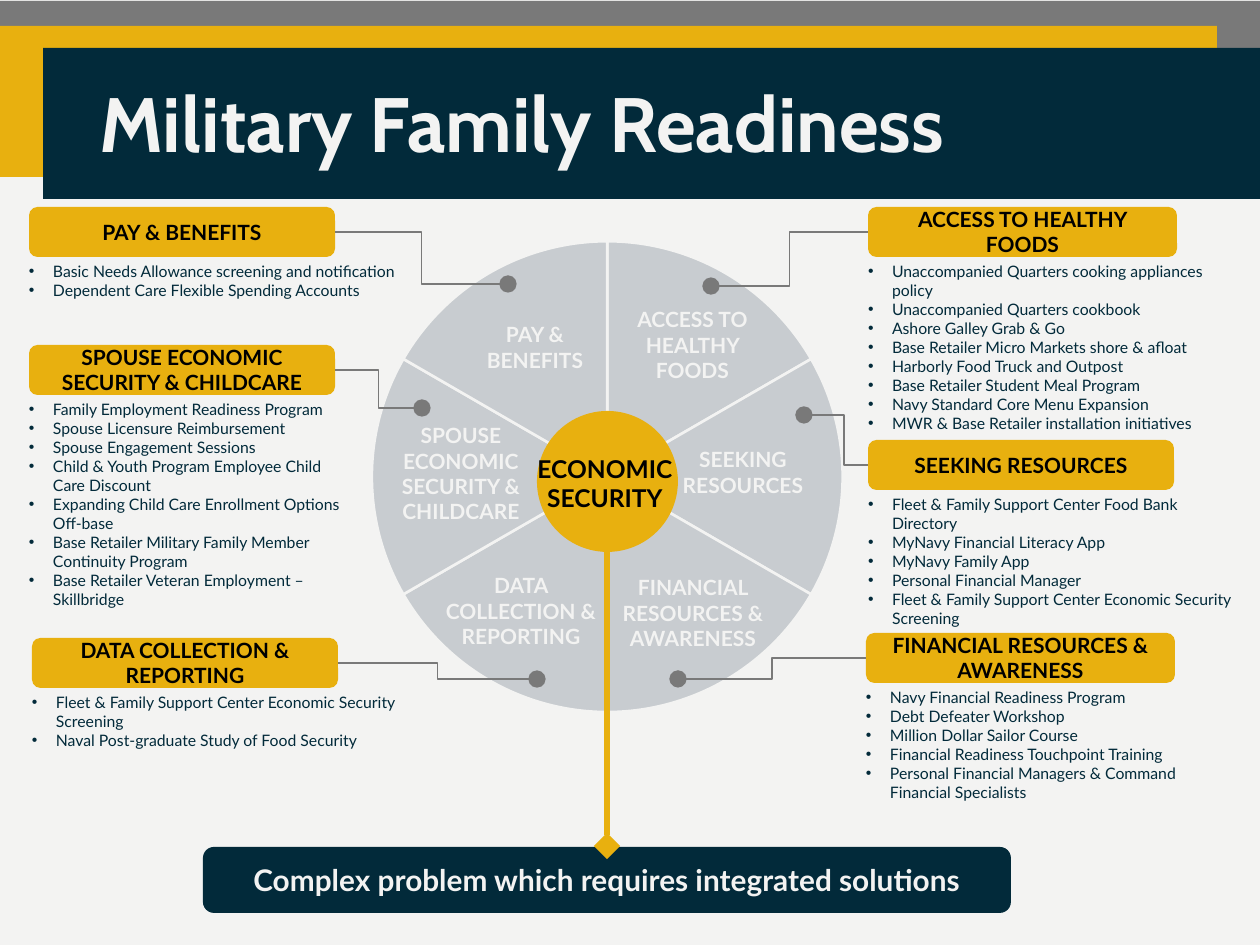
from lxml.etree import SubElement
from pptx import Presentation
from pptx.chart.data import CategoryChartData
from pptx.dml.color import RGBColor
from pptx.enum.chart import XL_CHART_TYPE
from pptx.enum.shapes import MSO_CONNECTOR, MSO_SHAPE
from pptx.enum.text import MSO_ANCHOR, PP_ALIGN
from pptx.oxml import parse_xml
from pptx.oxml.ns import nsdecls, qn
from pptx.util import Pt

SCALE = 914400 / 126
NAVY, GOLD, GRAY, PALE = "022A3A", "E8B00F", "797979", "F3F3F2"
SLICE, BLACK = "C8CCD0", "000000"

# Button box, dot at the connector's end, elbow position, heading, bullets
PANELS = [
    ((29, 207, 306, 50), (508, 284), 50, "PAY & BENEFITS", [
        "Basic Needs Allowance screening and notification",
        "Dependent Care Flexible Spending Accounts"]),
    ((29, 345, 306, 50), (422, 408), 50, "SPOUSE ECONOMIC SECURITY & CHILDCARE", [
        "Family Employment Readiness Program",
        "Spouse Licensure Reimbursement",
        "Spouse Engagement Sessions",
        "Child & Youth Program Employee Child Care Discount",
        "Expanding Child Care Enrollment Options Off-base",
        "Base Retailer Military Family Member Continuity Program",
        "Base Retailer Veteran Employment – Skillbridge"]),
    ((32, 638, 306, 50), (537, 679), 50, "DATA COLLECTION & REPORTING", [
        "Fleet & Family Support Center Economic Security Screening",
        "Naval Post-graduate Study of Food Security"]),
    ((868, 207, 309, 50), (711, 286), 50, "ACCESS TO HEALTHY FOODS", [
        "Unaccompanied Quarters cooking appliances policy",
        "Unaccompanied Quarters cookbook",
        "Ashore Galley Grab & Go",
        "Base Retailer Micro Markets shore & afloat",
        "Harborly Food Truck and Outpost",
        "Base Retailer Student Meal Program",
        "Navy Standard Core Menu Expansion",
        "MWR & Base Retailer installation initiatives"]),
    ((868, 440, 306, 50), (804, 415), 37.6, "SEEKING RESOURCES", [
        "Fleet & Family Support Center Food Bank Directory",
        "MyNavy Financial Literacy App",
        "MyNavy Family App",
        "Personal Financial Manager",
        "Fleet & Family Support Center Economic Security Screening"]),
    ((866, 633, 309, 50), (678, 679), 50, "FINANCIAL RESOURCES & AWARENESS", [
        "Navy Financial Readiness Program",
        "Debt Defeater Workshop",
        "Million Dollar Sailor Course",
        "Financial Readiness Touchpoint Training",
        "Personal Financial Managers & Command Financial Specialists"]),
]

# Offset from the wheel's corner, width, wording
LABELS = [
    (181, 99, 174, "PAY &\nBENEFITS"),
    (352, 84, 147, "ACCESS TO HEALTHY FOODS"),
    (178, 350, 152, "DATA COLLECTION & REPORTING"),
    (339, 352, 174, "FINANCIAL RESOURCES & AWARENESS"),
    (107, 200, 174, "SPOUSE\nECONOMIC SECURITY & CHILDCARE"),
    (389, 224, 174, "SEEKING RESOURCES"),
]


def px(*nums):
    return [round(n * SCALE) for n in nums]


def rgb(code):
    return RGBColor.from_string(code)


def style(para, size, color, bold=True, align=PP_ALIGN.CENTER, name="Lato"):
    para.alignment = align
    font = para.font
    font.size, font.bold, font.name = Pt(size), bold, name
    font.color.rgb = rgb(color)


def block(slide, kind, box, fill, text="", size=12, color=BLACK):
    shape = slide.shapes.add_shape(kind, *px(*box))
    shape.shadow.inherit = False
    shape.fill.solid()
    shape.fill.fore_color.rgb = rgb(fill)
    shape.line.fill.background()
    if text:
        frame = shape.text_frame
        frame.text, frame.word_wrap = text, True
        frame.vertical_anchor = MSO_ANCHOR.MIDDLE
        style(frame.paragraphs[0], size, color)


def words(slide, box, text):
    frame = slide.shapes.add_textbox(*px(*box)).text_frame
    frame.word_wrap = True
    frame.margin_left = frame.margin_right = 0
    frame.margin_top = frame.margin_bottom = 0
    frame.text = text
    return frame.paragraphs


def link(slide, kind, start, end, color, width, tip, bend=50):
    line = slide.shapes.add_connector(kind, *px(*start, *end))
    line.line.color.rgb = rgb(color)
    line.line.width = Pt(width)
    SubElement(line.line._get_or_add_ln(), qn("a:tailEnd"),
               type=tip, w="lg", len="lg")
    props = line._element.spPr
    SubElement(props, qn("a:effectLst"))
    if bend != 50:
        SubElement(props.prstGeom.get_or_add_avLst(), qn("a:gd"),
                   name="adj1", fmla=f"val {round(bend * 1000)}")


def header(slide, box):
    x, y, w, h = box
    for left, top, wide, tall, fill in (
            (0, 1, w, 147, GRAY), (0, 26, w - 43, 151, GOLD),
            (43, 48, w - 43, 151, NAVY)):
        block(slide, MSO_SHAPE.RECTANGLE, (x + left, y + top, wide, tall), fill)
    title = slide.shapes.title
    title.left, title.top, title.width, title.height = px(x + 87, y + 42, 1086, 171)
    title.text_frame.text = "Military Family Readiness"
    title.text_frame.vertical_anchor = MSO_ANCHOR.MIDDLE
    para = title.text_frame.paragraphs[0]
    para.line_spacing = 0.9
    style(para, 44, PALE, align=PP_ALIGN.LEFT, name="Cabin")
    # Bring the title in front of the bands
    title.element.getparent().append(title.element)


def wheel(slide, box):
    x, y, w, h = box
    data = CategoryChartData()
    data.categories = ["1", "2", "3", "4", "5", "6"]
    data.add_series("Series 1", [17] * 6)
    chart = slide.shapes.add_chart(XL_CHART_TYPE.PIE, *px(*box), data).chart
    chart.has_legend = chart.has_title = False
    chart.font.size, chart.font.name = Pt(10), "Lato"
    chart.font.color.rgb = rgb(NAVY)
    plot = chart.plots[0]
    plot.vary_by_categories = False
    for i in range(6):
        part = plot.series[0].points[i].format
        part.fill.solid()
        part.fill.fore_color.rgb = rgb(SLICE)
        part.line.color.rgb = rgb(PALE)
        part.line.width = Pt(1.5)
    # Fix the pie's diameter and centre it in the box
    side = 471
    area = chart._chartSpace.chart.plotArea
    for old in area.findall(qn("c:layout")):
        area.remove(old)
    spots = {"x": (1 - side / w) / 2, "y": (1 - side / h) / 2,
             "w": side / w, "h": side / h}
    rules = '<c:layoutTarget val="inner"/><c:xMode val="edge"/><c:yMode val="edge"/>'
    rules += "".join(f'<c:{key} val="{val:.3f}"/>' for key, val in spots.items())
    area.insert(0, parse_xml(
        f'<c:layout {nsdecls("c")}><c:manualLayout>{rules}</c:manualLayout></c:layout>'))

    for left, top, wide, text in LABELS:
        for para in words(slide, (x + left, y + top, wide, 73), text):
            style(para, 12, PALE)
    # Hub
    block(slide, MSO_SHAPE.OVAL, (x + 270, y + 188, 141, 141), GOLD)
    for para in words(slide, (x + 251, y + 231, 174, 57), "ECONOMIC\nSECURITY"):
        style(para, 14, BLACK)


def panel(slide, box, dot, bend, head, items):
    x, y, w, h = box
    block(slide, MSO_SHAPE.ROUNDED_RECTANGLE, box, GOLD, head)
    for para in words(slide, (x, y + h + 5, w + 62 if len(items) == 2
                              else w + 10 if x < 630 else 370, 60), "\n".join(items)):
        props = para._p.get_or_add_pPr()
        indent = px(24)[0]
        props.set("marL", str(indent))
        props.set("indent", str(-indent))
        SubElement(props, qn("a:buFont"), typeface="Arial")
        SubElement(props, qn("a:buChar"), char="•")
        style(para, 9, NAVY, False, PP_ALIGN.LEFT)
    start = (x + w if dot[0] > x else x, y + h // 2)
    link(slide, MSO_CONNECTOR.ELBOW, start, dot, GRAY, 1, "oval", bend)


def footer(slide, box):
    x, y, w, h = box
    block(slide, MSO_SHAPE.ROUNDED_RECTANGLE, box, NAVY,
          "Complex problem which requires integrated solutions", 17, PALE)
    mid = x + w // 2
    link(slide, MSO_CONNECTOR.STRAIGHT, (mid, y - 296), (mid, y - 1),
         GOLD, 3, "diamond")


def main():
    deck = Presentation()
    deck.slide_width, deck.slide_height = px(1260, 945)
    slide = deck.slides.add_slide(deck.slide_layouts[5])
    back = slide.background.fill
    back.solid()
    back.fore_color.rgb = rgb(PALE)
    header(slide, (0, 0, 1260, 199))
    wheel(slide, (267, 223, 680, 508))
    for item in PANELS:
        panel(slide, *item)
    footer(slide, (203, 847, 808, 66))
    deck.save("out.pptx")


if __name__ == "__main__":
    main()
